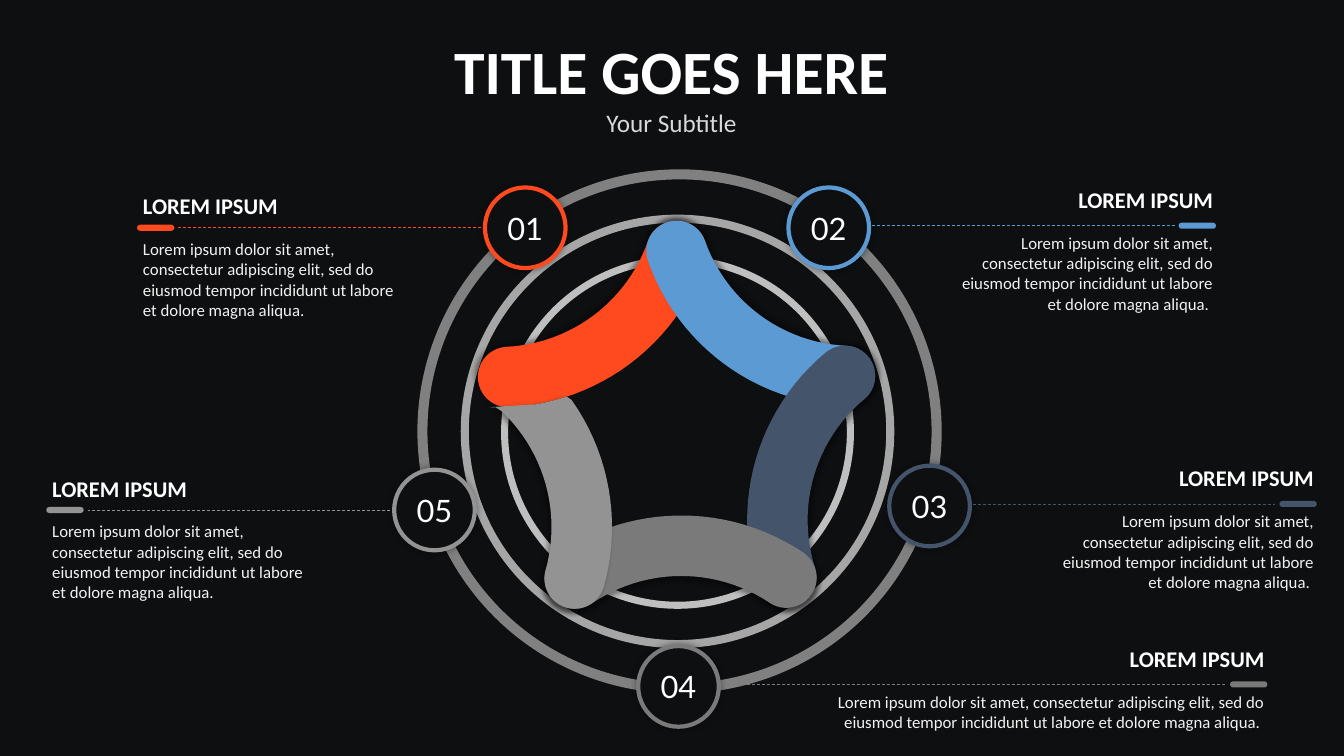
from dataclasses import dataclass
from math import atan2, cos, dist, pi, radians, sin, tan
from typing import NamedTuple, Optional

from lxml.etree import SubElement
from pptx import Presentation
from pptx.dml.color import RGBColor
from pptx.enum.dml import MSO_LINE
from pptx.enum.shapes import MSO_CONNECTOR, MSO_SHAPE
from pptx.enum.text import MSO_ANCHOR, PP_ALIGN
from pptx.oxml.ns import qn
from pptx.util import Emu, Pt

PX = 9144  # EMU, 100 px to the inch
CIRCLE = 80
TAG_WIDTH, TAG_HEIGHT = 37, 6
HALF_BAR = 30
SWEEP = radians(68)
STEPS = 24
BODY = ("Lorem ipsum dolor sit amet, consectetur adipiscing elit, sed do "
        "eiusmod tempor incididunt ut labore et dolore magna aliqua.")


@dataclass(frozen=True)
class Theme:
    back: str = "0E0F11"
    white: str = "FFFFFF"
    body: str = "F2F2F2"
    subtitle: str = "D9D9D9"
    red: str = "FE4A1E"
    blue: str = "5C9AD3"
    navy: str = "44546B"
    gray: str = "7A7A7A"
    silver: str = "939393"
    font: str = "Calibri"
    number_font: str = "Lato"
    title_size: int = 44
    subtitle_size: int = 18
    number_size: int = 22
    heading_size: int = 16
    body_size: int = 12


THEME = Theme()


class Point(NamedTuple):
    x: float
    y: float

    def away(self, angle: float, length: float) -> "Point":
        return Point(self.x + length * cos(angle), self.y + length * sin(angle))


class Ring(NamedTuple):
    left: int
    top: int
    size: int
    thickness: int
    color: str


class Bar(NamedTuple):
    start: Point
    end: Point
    color: str
    shadow_angle: int


class Item(NamedTuple):
    label: str
    color: str
    left: int
    top: int
    on_left: bool = False
    line_length: int = 300
    text_width: int = 270
    text_height: int = 138


RINGS = [Ring(414, 168, 520, 10, "808080"),
         Ring(457, 213, 430, 8, "A6A6A6"),
         Ring(497, 254, 350, 7, "BFBFBF")]

TOP, RIGHT, LOW_RIGHT = Point(671, 249), Point(838, 373), Point(780, 573)
LOW_LEFT, LEFT = Point(570, 574), Point(504, 374)
BARS = [Bar(LEFT, TOP, THEME.red, 225),
        Bar(TOP, RIGHT, THEME.blue, 315),
        Bar(RIGHT, LOW_RIGHT, THEME.navy, 45),
        Bar(LOW_RIGHT, LOW_LEFT, THEME.gray, 90),
        Bar(LOW_LEFT, LEFT, THEME.silver, 135)]

ITEMS = [Item("01", THEME.red, 481, 186, on_left=True),
         Item("05", THEME.silver, 391, 466, on_left=True),
         Item("02", THEME.blue, 782, 186),
         Item("03", THEME.navy, 882, 462),
         Item("04", THEME.gray, 633, 641, line_length=500,
              text_width=484, text_height=98)]


def rgb(color: str) -> RGBColor:
    return RGBColor.from_string(color)


def px(*lengths: float) -> list[Emu]:
    return [Emu(round(length * PX)) for length in lengths]


def paint(shape, fill: str, line: Optional[str] = None) -> None:
    shape.shadow.inherit = False
    shape.fill.solid()
    shape.fill.fore_color.rgb = rgb(fill)
    if line:
        shape.line.color.rgb = rgb(line)
        shape.line.width = Pt(3)
    else:
        shape.line.fill.background()


def cast_shadow(shape, blur: int, distance: int, angle: int) -> None:
    effects = shape._element.spPr.find(qn("a:effectLst"))
    shadow = SubElement(effects, qn("a:outerShdw"), blurRad=str(Pt(blur)),
                        dist=str(Pt(distance)), dir=str(angle * 60000),
                        rotWithShape="0")
    color = SubElement(shadow, qn("a:srgbClr"), val="000000")
    SubElement(color, qn("a:alpha"), val="40000")


def write(para, text: str, size: int, color: str, align: PP_ALIGN,
          bold: bool = False, font: str = THEME.font) -> None:
    para.text = text
    para.alignment = align
    para.font.size = Pt(size)
    para.font.name = font
    para.font.bold = bold
    para.font.color.rgb = rgb(color)


def add_text_frame(page, left: int, top: int, width: int, height: int):
    frame = page.shapes.add_textbox(*px(left, top, width, height)).text_frame
    frame.word_wrap = True
    return frame


def arc_of(bar: Bar) -> tuple[Point, float]:
    """Centre and radius of the bar's middle line, which bends inwards."""
    dx, dy = bar.end.x - bar.start.x, bar.end.y - bar.start.y
    rise = 0.5 / tan(SWEEP / 2)
    centre = Point((bar.start.x + bar.end.x) / 2 + dy * rise,
                   (bar.start.y + bar.end.y) / 2 - dx * rise)
    return centre, dist(bar.start, bar.end) / 2 / sin(SWEEP / 2)


def bar_outline(bar: Bar, over: Optional[Bar]) -> list[Point]:
    """Outline of a round-ended bar, its end cut along the bar lying over it."""
    centre, radius = arc_of(bar)
    first = atan2(bar.start.y - centre.y, bar.start.x - centre.x)
    last = first - SWEEP
    steps = [step / STEPS for step in range(STEPS + 1)]
    inner = [centre.away(first - SWEEP * t, radius + HALF_BAR) for t in steps]
    outer = [centre.away(last + SWEEP * t, radius - HALF_BAR) for t in steps]
    end_cap = [bar.end.away(last - pi * t, HALF_BAR) for t in steps]
    start_cap = [bar.start.away(first + pi - pi * t, HALF_BAR) for t in steps]
    if over is None:
        return inner + end_cap + outer + start_cap

    hub, reach = arc_of(over)
    edge = reach + HALF_BAR
    cut = [point if dist(point, hub) > edge
           else hub.away(atan2(point.y - hub.y, point.x - hub.x), edge)
           for point in inner + outer]
    return cut + start_cap


def add_bar(page, bar: Bar, over: Optional[Bar] = None) -> None:
    points = [px(*point) for point in bar_outline(bar, over)]
    builder = page.shapes.build_freeform(*points[0], scale=1.0)
    builder.add_line_segments(points[1:], close=True)
    shape = builder.convert_to_shape()
    paint(shape, bar.color)
    cast_shadow(shape, 4, 3, bar.shadow_angle)


def add_ring(page, ring: Ring) -> None:
    shape = page.shapes.add_shape(
        MSO_SHAPE.DONUT, *px(ring.left, ring.top, ring.size, ring.size))
    shape.adjustments[0] = ring.thickness / ring.size
    paint(shape, ring.color)


def add_item(page, item: Item) -> None:
    """Numbered circle with its dashed line, colour tag and text."""
    if item.on_left:
        near, line_y = item.left - 4, item.top + 40
        far = near - item.line_length
        tag_left = far - 4 - TAG_WIDTH
        text_left, text_top = tag_left - 4, item.top
        align, body = PP_ALIGN.LEFT, BODY
    else:
        near, line_y = item.left + 83, item.top + 38
        far = near + item.line_length
        tag_left = far + 4
        text_left = tag_left + TAG_WIDTH + 7 - item.text_width
        text_top = item.top - 6
        align, body = PP_ALIGN.RIGHT, BODY + " "

    frame = add_text_frame(page, text_left, text_top,
                           item.text_width, item.text_height)
    write(frame.paragraphs[0], "LOREM IPSUM", THEME.heading_size,
          THEME.white, align, bold=True)
    para = frame.add_paragraph()
    write(para, body, THEME.body_size, THEME.body, align)
    para.space_before = Pt(14)

    circle = page.shapes.add_shape(
        MSO_SHAPE.OVAL, *px(item.left, item.top, CIRCLE, CIRCLE))
    paint(circle, THEME.back, item.color)
    cast_shadow(circle, 5, 0, 0)
    circle.text_frame.vertical_anchor = MSO_ANCHOR.MIDDLE
    circle.text_frame.word_wrap = False
    write(circle.text_frame.paragraphs[0], item.label, THEME.number_size,
          THEME.white, PP_ALIGN.CENTER, font=THEME.number_font)

    line = page.shapes.add_connector(
        MSO_CONNECTOR.STRAIGHT, *px(near, line_y, far, line_y))
    line.line.color.rgb = rgb(item.color)
    line.line.width = Pt(0.5)
    line.line.dash_style = MSO_LINE.DASH
    SubElement(line._element.spPr, qn("a:effectLst"))

    tag = page.shapes.add_shape(
        MSO_SHAPE.ROUNDED_RECTANGLE,
        *px(tag_left, line_y - TAG_HEIGHT / 2, TAG_WIDTH, TAG_HEIGHT))
    tag.adjustments[0] = 0.5
    paint(tag, item.color)


def main() -> None:
    deck = Presentation()
    deck.slide_width, deck.slide_height = px(1333, 750)
    page = deck.slides.add_slide(deck.slide_layouts[6])
    page.background.fill.solid()
    page.background.fill.fore_color.rgb = rgb(THEME.back)

    for ring in RINGS:
        add_ring(page, ring)
    for bar in BARS[:-1]:
        add_bar(page, bar)
    add_bar(page, BARS[-1], over=BARS[0])

    frame = add_text_frame(page, 365, 28, 602, 114)
    write(frame.paragraphs[0], "TITLE GOES HERE", THEME.title_size,
          THEME.white, PP_ALIGN.CENTER, bold=True)
    write(frame.add_paragraph(), "Your Subtitle", THEME.subtitle_size,
          THEME.subtitle, PP_ALIGN.CENTER)

    for item in ITEMS:
        add_item(page, item)
    deck.save("out.pptx")


if __name__ == "__main__":
    main()
